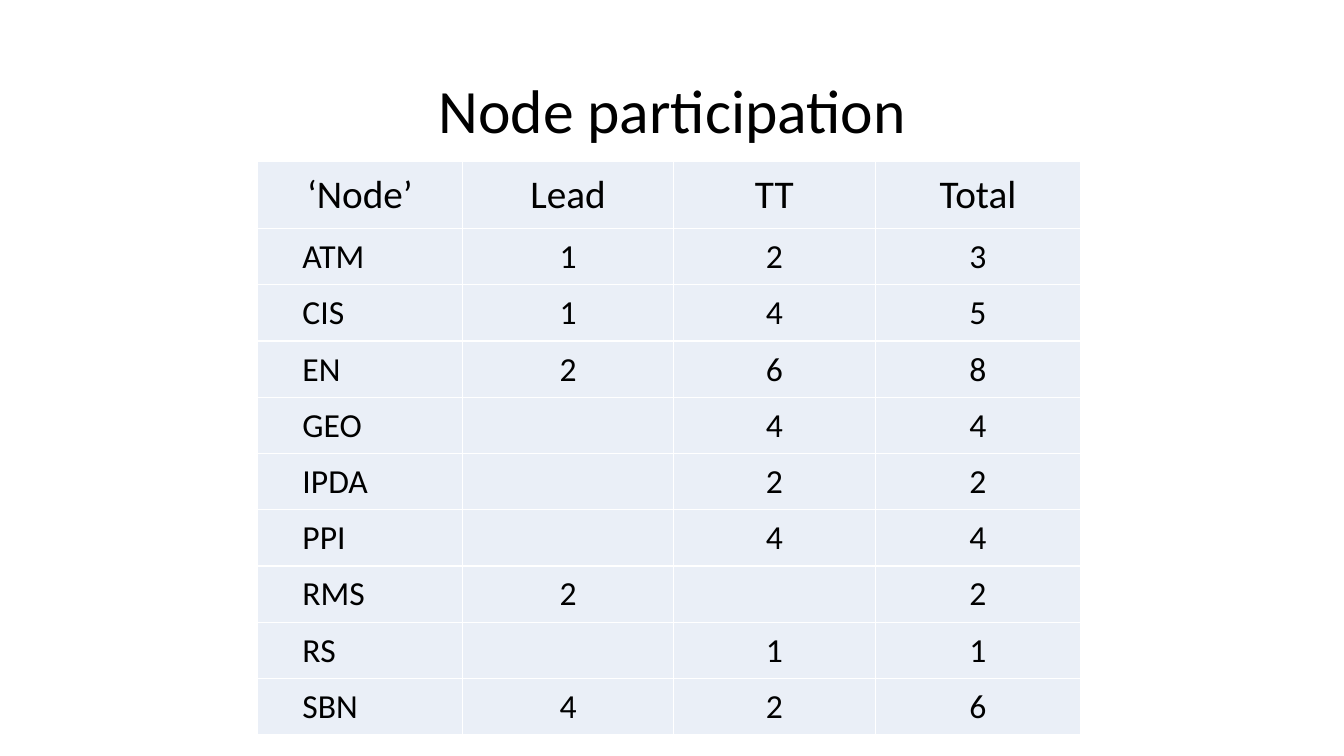
from dataclasses import dataclass

from lxml.etree import SubElement
from pptx import Presentation
from pptx.dml.color import RGBColor
from pptx.enum.text import MSO_ANCHOR as Anchor, PP_ALIGN as Align
from pptx.oxml.ns import qn
from pptx.util import Inches, Pt


@dataclass(frozen=True)
class Theme:
    font: str = "Calibri"
    text: str = "000000"
    cell: str = "EAEFF7"
    border: str = "FFFFFF"
    border_width: float = 1
    title_size: int = 44
    header_size: int = 28
    body_size: int = 24


THEME = Theme()
SLIDE_WIDTH, SLIDE_HEIGHT = 13.33, 7.5

# Boxes in inches: left, top, width, height
TITLE_BOX = (0.92, 0.4, 11.5, 1.45)
TABLE_BOX = (2.55, 1.6, 8.17, 5.69)

# Table grid: column and row shares of the table box
COLUMN_SHARES = (2.04, 2.09, 2, 2.04)
HEADER_SHARE, BODY_SHARE = 0.67, 0.56
CELL_INSET, NAME_INDENT = 0.01, 0.45

HEADINGS = ("‘Node’", "Lead", "TT", "Total")
NODES = (
    ("ATM", 1, 2, 3),
    ("CIS", 1, 4, 5),
    ("EN", 2, 6, 8),
    ("GEO", "", 4, 4),
    ("IPDA", "", 2, 2),
    ("PPI", "", 4, 4),
    ("RMS", 2, "", 2),
    ("RS", "", 1, 1),
    ("SBN", 4, 2, 6),
)


def write_text(paragraph, text, size, alignment):
    paragraph.alignment = alignment
    run = paragraph.add_run()
    run.text = text
    run.font.name = THEME.font
    run.font.size = Pt(size)
    run.font.color.rgb = RGBColor.from_string(THEME.text)


def set_borders(cell):
    properties = cell._tc.get_or_add_tcPr()
    for side in ("a:lnL", "a:lnR", "a:lnT", "a:lnB"):
        line = SubElement(properties, qn(side), w=str(Pt(THEME.border_width)))
        fill = SubElement(line, qn("a:solidFill"))
        SubElement(fill, qn("a:srgbClr"), val=THEME.border)


def format_cell(cell, indent):
    set_borders(cell)
    cell.fill.solid()
    cell.fill.fore_color.rgb = RGBColor.from_string(THEME.cell)
    cell.vertical_anchor = Anchor.MIDDLE
    cell.margin_left = Inches(indent)
    cell.margin_right = cell.margin_top = Inches(CELL_INSET)
    cell.margin_bottom = 0


def place_title(slide, box, text):
    title = slide.shapes.title
    title.left, title.top, title.width, title.height = map(Inches, box)
    frame = title.text_frame
    frame.word_wrap = True
    frame.vertical_anchor = Anchor.MIDDLE
    paragraph = frame.paragraphs[0]
    paragraph.line_spacing = 0.9
    write_text(paragraph, text, THEME.title_size, Align.CENTER)


def place_table(slide, box, headings, records):
    rows = (headings, *records)
    frame = slide.shapes.add_table(len(rows), len(headings), *map(Inches, box))
    table = frame.table
    table.first_row = table.horz_banding = False

    # Share the box out among columns and rows
    width, height = box[2:]
    for column, share in zip(table.columns, COLUMN_SHARES):
        column.width = Inches(width * share / sum(COLUMN_SHARES))
    row_shares = [HEADER_SHARE] + [BODY_SHARE] * len(records)
    for row, share in zip(table.rows, row_shares):
        row.height = Inches(height * share / sum(row_shares))

    # Headings are centred; node names are indented from the left
    for row_index, values in enumerate(rows):
        size = THEME.body_size if row_index else THEME.header_size
        for column_index, value in enumerate(values):
            is_name = row_index > 0 and column_index == 0
            cell = table.cell(row_index, column_index)
            format_cell(cell, NAME_INDENT if is_name else CELL_INSET)
            if value != "":
                alignment = Align.LEFT if is_name else Align.CENTER
                write_text(cell.text_frame.paragraphs[0], str(value), size, alignment)


def main():
    presentation = Presentation()
    presentation.slide_width = Inches(SLIDE_WIDTH)
    presentation.slide_height = Inches(SLIDE_HEIGHT)
    title_only = presentation.slide_layouts[5]
    slide = presentation.slides.add_slide(title_only)
    place_title(slide, TITLE_BOX, "Node participation")
    place_table(slide, TABLE_BOX, HEADINGS, NODES)
    presentation.save("out.pptx")


if __name__ == "__main__":
    main()
